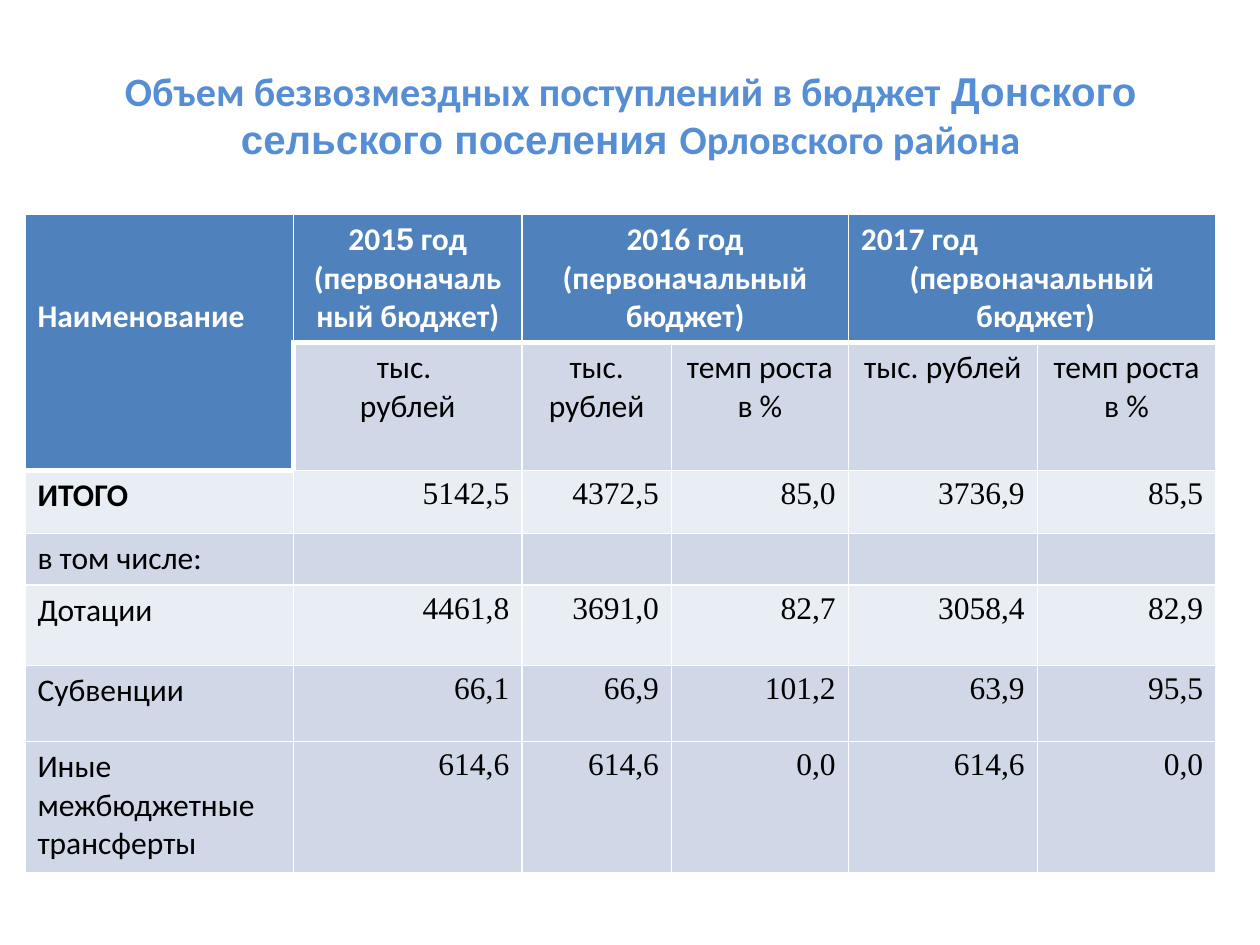
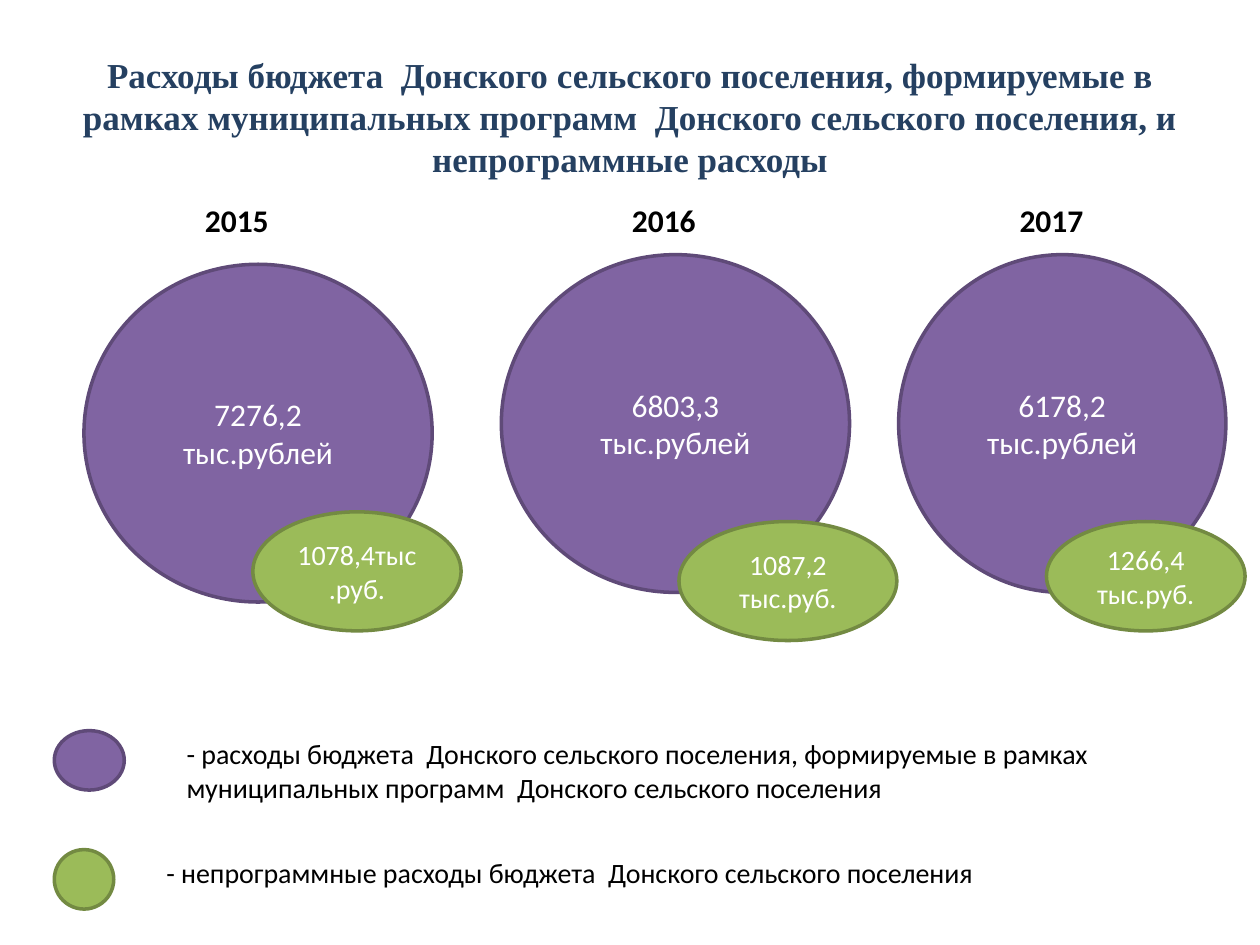
from lxml import etree
from pptx import Presentation
from pptx.dml.color import RGBColor
from pptx.enum.shapes import MSO_SHAPE
from pptx.enum.text import MSO_ANCHOR, MSO_AUTO_SIZE, PP_ALIGN
from pptx.oxml.ns import qn
from pptx.util import Pt

WHITE = RGBColor(0xFF, 0xFF, 0xFF)
BLACK = RGBColor(0, 0, 0)
TITLE_BLUE = RGBColor(0x55, 0x8E, 0xD5)
TITLE_NAVY = RGBColor(0x25, 0x40, 0x61)
HEAD_BLUE = RGBColor(0x4F, 0x81, 0xBD)
ROW_DARK = RGBColor(0xD0, 0xD8, 0xE8)
ROW_LIGHT = RGBColor(0xE9, 0xED, 0xF4)
# Fill and outline of the two kinds of expenses
PROGRAM = RGBColor(0x80, 0x64, 0xA2), RGBColor(0x5F, 0x4A, 0x78)
OTHER = RGBColor(0x9B, 0xBB, 0x59), RGBColor(0x73, 0x8A, 0x42)

SANS, SERIF, ARIAL = "Calibri", "Times New Roman", "Arial"
LEFT, CENTER, RIGHT = PP_ALIGN.LEFT, PP_ALIGN.CENTER, PP_ALIGN.RIGHT

COL_WIDTHS = [153.5, 130.5, 85.5, 101, 108, 102]
ROW_HEIGHTS = [73, 69.5, 36, 29.5, 46, 43.5, 75]
UNITS = ["тыс. \nрублей", "тыс. рублей", "темп роста в %",
         "тыс. рублей", "темп роста в %"]
INCOME = [
    ("ИТОГО", ["5142,5", "4372,5", "85,0", "3736,9", "85,5"], ROW_LIGHT),
    ("в том числе:", [], ROW_DARK),
    ("Дотации", ["4461,8", "3691,0", "82,7", "3058,4", "82,9"], ROW_LIGHT),
    ("Субвенции", ["66,1", "66,9", "101,2", "63,9", "95,5"], ROW_DARK),
    ("Иные межбюджетные трансферты",
     ["614,6", "614,6", "0,0", "614,6", "0,0"], ROW_DARK),
]

# Year, label left, then box and text of the large and the small ellipse
EXPENSES = [
    ("2015", 110, (48, 151, 199, 193), "7276,2 тыс.рублей",
     (144.5, 292.5, 119, 68), "1078,4тыс.руб."),
    ("2016", 354, (286.5, 145.5, 199, 193), "6803,3\nтыс.рублей",
     (388, 298, 124.5, 68), "1087,2 тыс.руб."),
    ("2017", 575.5, (513.5, 145.5, 187, 193), "6178,2\nтыс.рублей",
     (598, 298, 113.5, 62.5), "1266,4 тыс.руб."),
]
LEGEND = [
    (PROGRAM, (31, 417.5, 40, 34), (99.5, 417.5, 572.5, 46),
     "- расходы бюджета  Донского сельского поселения, формируемые в рамках "
     "муниципальных программ  Донского сельского поселения"),
    (OTHER, (31, 485.5, 34, 34), (88, 485.5, 572.5, 26.5),
     "- непрограммные расходы бюджета  Донского сельского поселения"),
]


def write(tf, text, size=18, color=BLACK, bold=False, font=SANS, align=LEFT):
    """Fill tf with a string, or with a list of (string, font) runs in one paragraph."""
    if isinstance(text, str):
        paragraphs = [[(line, font)] for line in text.split("\n")]
    else:
        paragraphs = [text]
    for i, runs in enumerate(paragraphs):
        p = tf.paragraphs[0] if i == 0 else tf.add_paragraph()
        p.alignment = align
        for words, name in runs:
            r = p.add_run()
            r.text = words
            for key, value in {"size": Pt(size), "bold": bold, "name": name}.items():
                setattr(r.font, key, value)
            r.font.color.rgb = color


def place(sp, box):
    for key, value in zip(("left", "top", "width", "height"), box):
        setattr(sp, key, Pt(value))


def add_titled_slide(prs, box, text, **style):
    slide = prs.slides.add_slide(prs.slide_layouts[5])
    title = slide.shapes.title
    place(title, box)
    tf = title.text_frame
    tf.auto_size = MSO_AUTO_SIZE.NONE
    tf.vertical_anchor = MSO_ANCHOR.MIDDLE
    write(tf, text, bold=True, align=CENTER, **style)
    return slide


def add_ellipse(slide, box, colors, text="", size=18):
    sp = slide.shapes.add_shape(MSO_SHAPE.OVAL, *map(Pt, box))
    sp.shadow.inherit = False
    fill, line = colors
    sp.fill.solid()
    sp.fill.fore_color.rgb = fill
    sp.line.color.rgb = line
    sp.line.width = Pt(2)
    if text:
        sp.text_frame.vertical_anchor = MSO_ANCHOR.MIDDLE
        write(sp.text_frame, text, size, WHITE, align=CENTER)


def add_label(slide, box, text, **style):
    tf = slide.shapes.add_textbox(*map(Pt, box)).text_frame
    tf.word_wrap = True
    write(tf, text, **style)


def set_borders(cell, row, col):
    """White 1 pt grid, 3 pt around the inner corner of the header."""
    thick = {
        "lnL": (row, col) == (1, 1),
        "lnR": (row, col) == (1, 0),
        "lnT": row == 1 or (row, col) == (2, 0),
        "lnB": row == 0 or (row, col) == (1, 0),
    }
    tcPr = cell._tc.get_or_add_tcPr()
    for i, (tag, is_thick) in enumerate(thick.items()):
        ln = etree.Element(qn("a:" + tag), w=str(Pt(3 if is_thick else 1)))
        fill = etree.SubElement(ln, qn("a:solidFill"))
        etree.SubElement(fill, qn("a:srgbClr"), val=str(WHITE))
        tcPr.insert(i, ln)


def fill_header(table):
    name = table.cell(0, 0)
    name.merge(table.cell(1, 0))
    name.margin_top = Pt(47.5)
    write(name.text_frame, "Наименование", color=WHITE, bold=True)

    years = {
        1: [("201", SANS), ("5", ARIAL), (" год (первоначальный бюджет)", SANS)],
        2: "2016 год (первоначальный бюджет)",
        4: "2017 год\n(первоначальный\n бюджет)",
    }
    for col, text in years.items():
        cell = table.cell(0, col)
        if col > 1:
            cell.merge(table.cell(0, col + 1))
        write(cell.text_frame, text, color=WHITE, bold=True, align=CENTER)
    table.cell(0, 4).text_frame.paragraphs[0].alignment = LEFT

    for col, text in enumerate(UNITS, 1):
        write(table.cell(1, col).text_frame, text, align=CENTER)


def add_income_table(slide):
    frame = slide.shapes.add_table(
        len(ROW_HEIGHTS), len(COL_WIDTHS), Pt(14.25), Pt(122.5),
        Pt(sum(COL_WIDTHS)), Pt(sum(ROW_HEIGHTS)))
    table = frame.table
    for column, width in zip(table.columns, COL_WIDTHS):
        column.width = Pt(width)
    for row, height in zip(table.rows, ROW_HEIGHTS):
        row.height = Pt(height)

    fills = [HEAD_BLUE, ROW_DARK] + [fill for _, _, fill in INCOME]
    for row, fill in enumerate(fills):
        for col in range(len(COL_WIDTHS)):
            cell = table.cell(row, col)
            cell.fill.solid()
            cell.fill.fore_color.rgb = HEAD_BLUE if row == 1 and col == 0 else fill
            set_borders(cell, row, col)

    fill_header(table)
    for row, (name, values, _) in enumerate(INCOME, 2):
        write(table.cell(row, 0).text_frame, name, bold=row == 2)
        for col, value in enumerate(values, 1):
            write(table.cell(row, col).text_frame, value, font=SERIF, align=RIGHT)


def add_expense_circles(slide):
    for year, left, big, big_text, small, small_text in EXPENSES:
        add_label(slide, (left, 111.5, 57, 29), year, bold=True)
        add_ellipse(slide, big, PROGRAM, big_text)
        add_ellipse(slide, small, OTHER, small_text, 16)


def add_legend(slide):
    for colors, marker, box, text in LEGEND:
        add_ellipse(slide, marker, colors)
        add_label(slide, box, text, size=16)


def main():
    prs = Presentation()
    prs.slide_width, prs.slide_height = Pt(720), Pt(540)

    income = add_titled_slide(
        prs, (36.5, 26, 648, 79),
        [("Объем безвозмездных поступлений в бюджет ", SANS),
         ("Донского сельского поселения ", ARIAL),
         ("Орловского района", SANS)],
        size=23, color=TITLE_BLUE)
    add_income_table(income)

    expenses = add_titled_slide(
        prs, (36, 21.5, 648, 90),
        "Расходы бюджета  Донского сельского поселения, формируемые в рамках "
        "муниципальных программ  Донского сельского поселения, и "
        "непрограммные расходы",
        size=20, color=TITLE_NAVY, font=SERIF)
    add_expense_circles(expenses)
    add_legend(expenses)

    prs.save("out.pptx")


if __name__ == "__main__":
    main()
